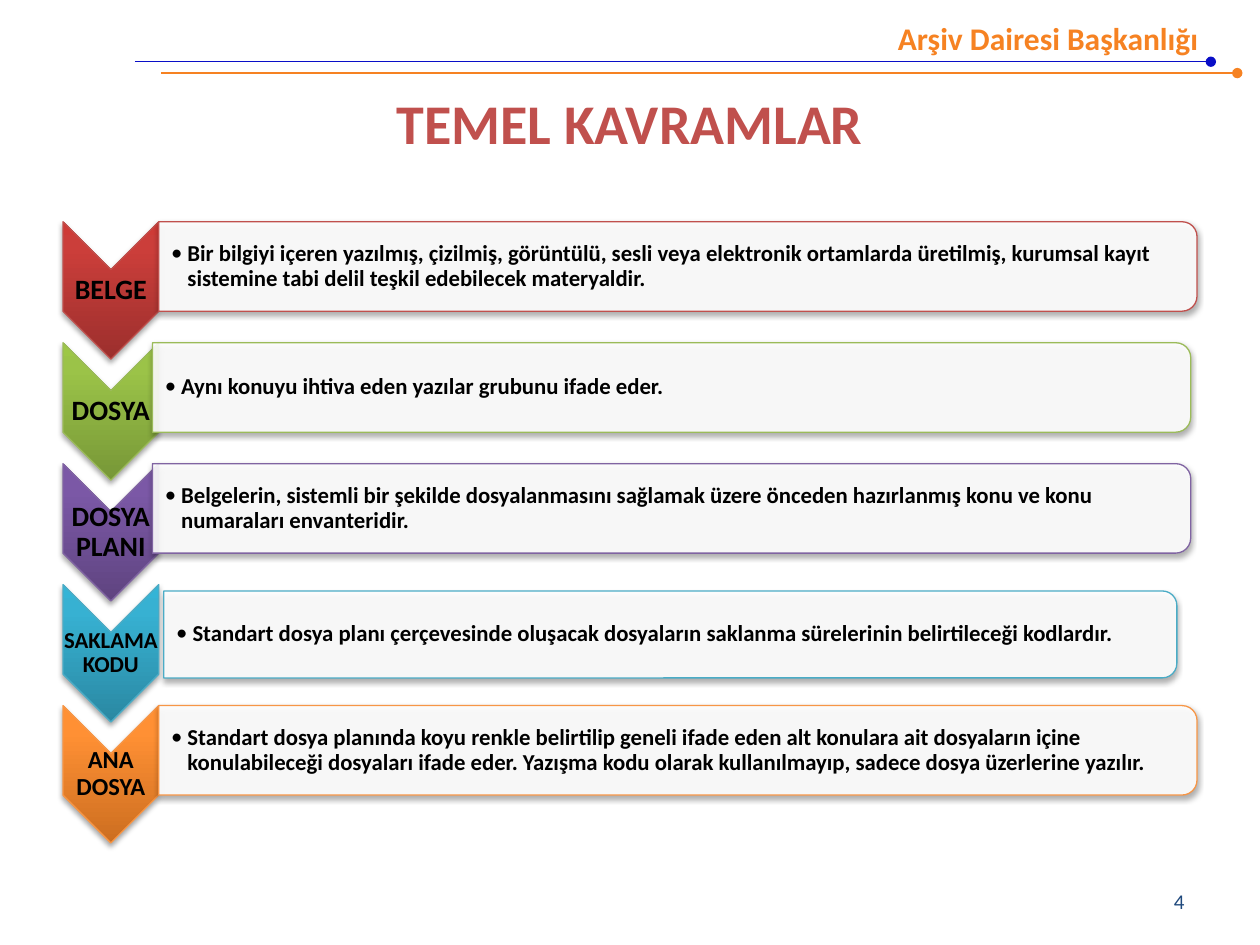
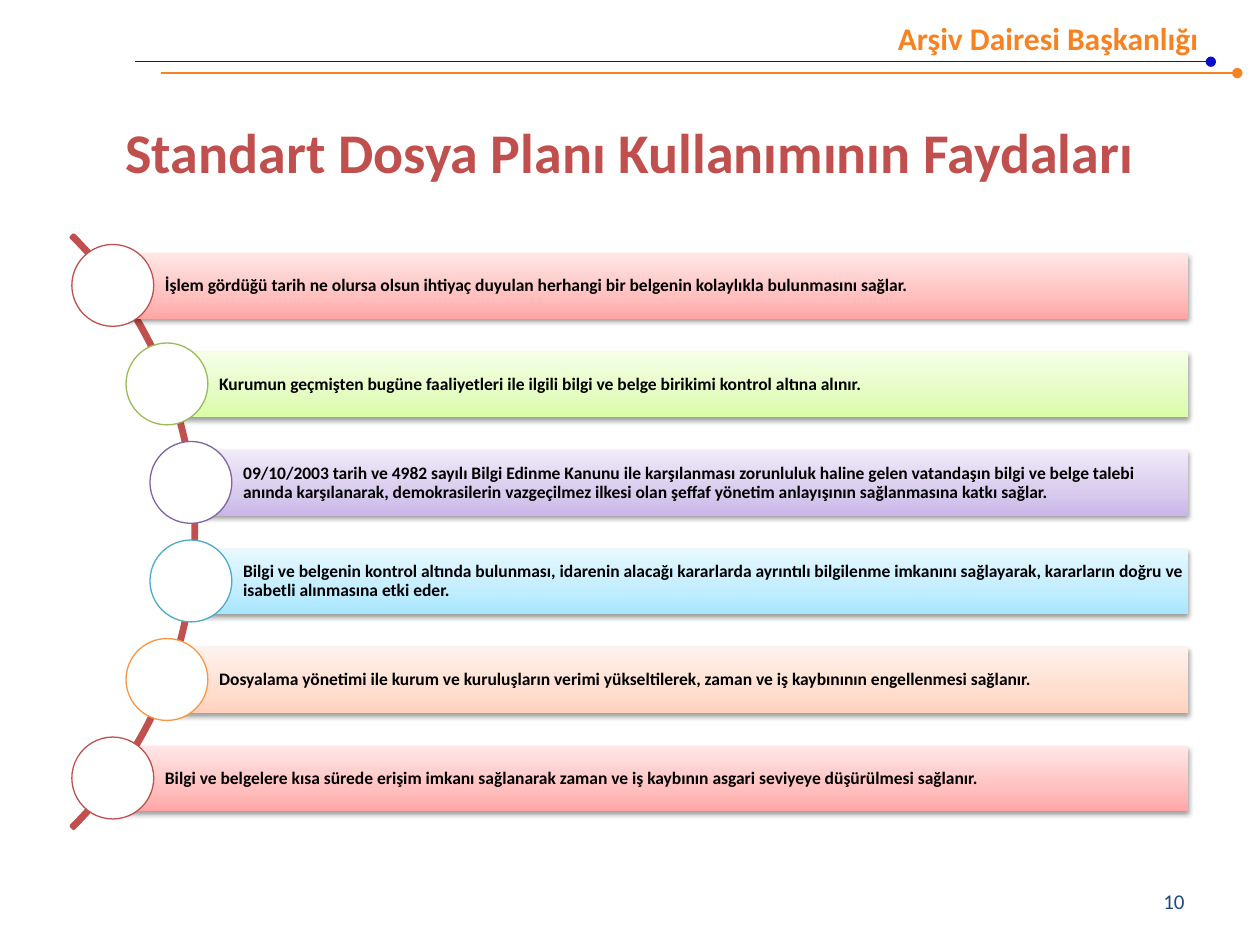
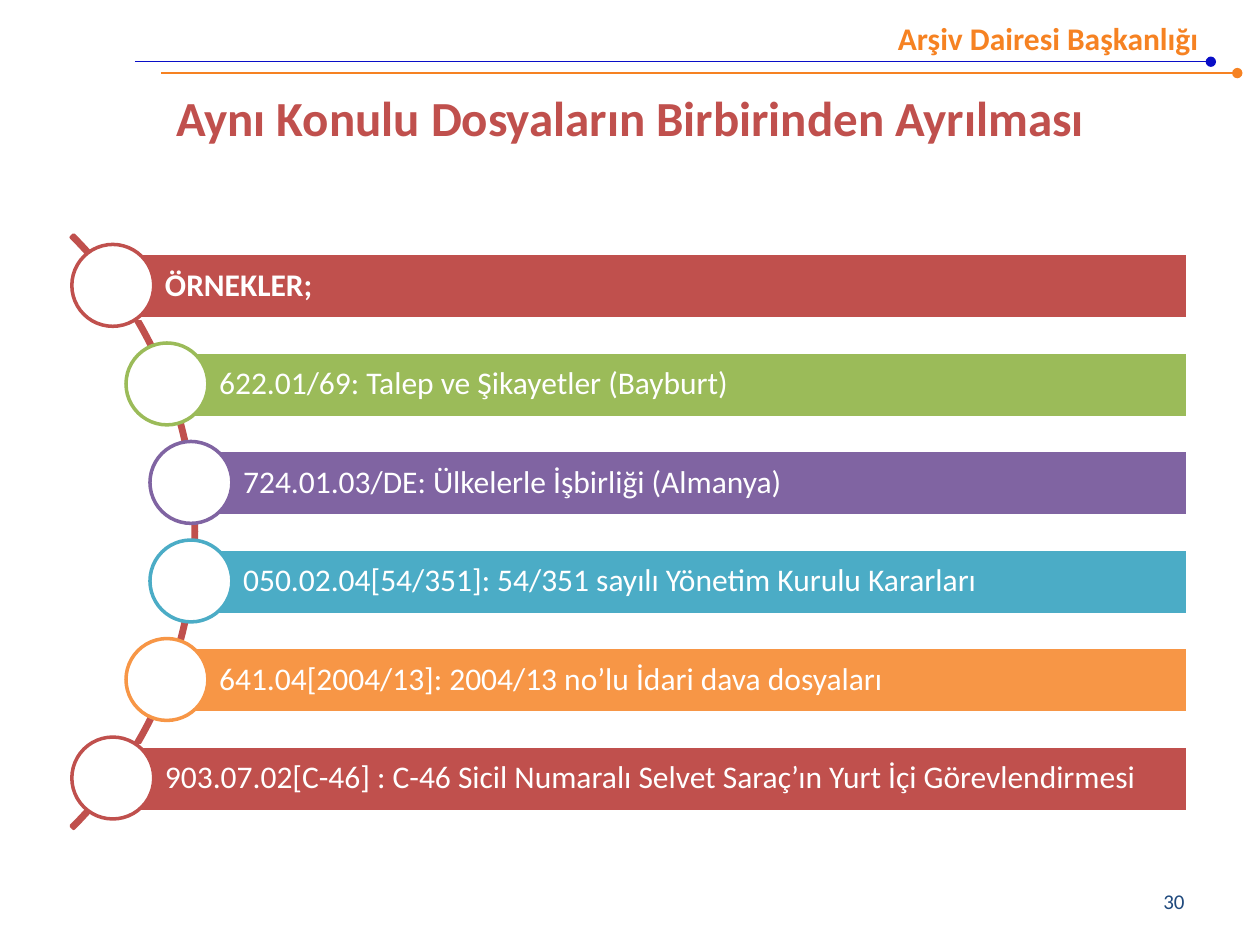
from dataclasses import dataclass
from typing import Optional

from lxml import etree
from pptx import Presentation
from pptx.dml.color import RGBColor
from pptx.enum.shapes import MSO_CONNECTOR as Link, MSO_SHAPE as Form
from pptx.enum.text import MSO_ANCHOR as Anchor, PP_ALIGN as Align
from pptx.oxml import parse_xml
from pptx.oxml.ns import nsdecls, qn
from pptx.util import Inches, Pt

Stops = tuple[tuple[int, str], ...]


@dataclass(frozen=True)
class Accent:
    base: str
    deep: Stops
    pale: Stops


def accent(base: str, deep: str, pale: str) -> Accent:
    return Accent(
        base,
        tuple(zip((0, 80, 100), deep.split())),
        tuple(zip((0, 35, 100), pale.split())),
    )


@dataclass(frozen=True)
class Theme:
    font: str = "Calibri"
    white: str = "FFFFFF"
    black: str = "000000"
    title: str = "C0504D"
    brand: str = "F68222"
    blue: str = "090EC7"
    page: str = "1F497D"
    head_size: float = 18
    page_size: float = 12
    body_size: float = 13
    thin: float = 0.75
    thick: float = 2
    accents: tuple[Accent, ...] = (
        accent("C0504D", "9C2F2D CB3E3A CE3B37", "FFA6A5 FFC0BF FFE7E7"),
        accent("9BBB59", "779737 9BC348 9DC746", "DAFDA7 E4FCC2 F5FFE7"),
        accent("8064A2", "5F4480 7B58A6 7C57A8", "C9B5E8 D8CBEE F0EAF9"),
        accent("4BACC6", "2A88A2 37B1D2 34B4D6", "A7E6FF C1EDFF E7F8FF"),
        accent("F79646", "CC6E20 FF9034 FF9136", "FFD2BD FFDED0 FFF2ED"),
    )


THEME = Theme()


@dataclass(frozen=True)
class Box:
    left: float
    top: float
    width: float
    height: float

    def inches(self) -> tuple:
        return tuple(Inches(n) for n in (self.left, self.top, self.width, self.height))

    def turned(self) -> "Box":
        gap = (self.width - self.height) / 2
        return Box(self.left + gap, self.top - gap, self.height, self.width)


@dataclass(frozen=True)
class Style:
    size: float
    color: str = THEME.black
    bold: bool = True
    align: Align = Align.LEFT
    pads: tuple[float, float, float, float] = (0.1, 0.05, 0.1, 0.05)
    tight: bool = True
    bullet: bool = False


@dataclass(frozen=True)
class Rule:
    left: float
    top: float
    color: str


@dataclass(frozen=True)
class Term:
    label: str
    size: float
    text: str
    left: float = 1.26
    drop: float = 0
    width: float = 8.24
    height: float = 0.71


@dataclass(frozen=True)
class Look:
    pale: bool
    size: float
    color: str
    line: float
    pad: float


RULES = (Rule(1.28, 0.58, THEME.brand), Rule(1.07, 0.49, THEME.blue))
RULE_LEN = 8.54

TERMS = (
    Term("BELGE", 16, "Bir bilgiyi içeren yazılmış, çizilmiş, görüntülü, sesli veya elektronik ortamlarda üretilmiş, kurumsal kayıt sistemine tabi delil teşkil edebilecek materyaldir."),
    Term("DOSYA", 16, "Aynı konuyu ihtiva eden yazılar grubunu ifade eder.", left=1.21),
    Term("DOSYA PLANI", 16, "Belgelerin, sistemli bir şekilde dosyalanmasını sağlamak üzere önceden hazırlanmış konu ve konu numaraları envanteridir.", left=1.21),
    Term("SAKLAMA KODU", 13, "Standart dosya planı çerçevesinde oluşacak dosyaların saklanma sürelerinin belirtileceği kodlardır.", left=1.3, drop=0.05, width=8.04, height=0.69),
    Term("ANA DOSYA", 14, "Standart dosya planında koyu renkle belirtilip geneli ifade eden alt konulara ait dosyaların içine konulabileceği dosyaları ifade eder. Yazışma kodu olarak kullanılmayıp, sadece dosya üzerlerine yazılır."),
)
TERM_TOP, TERM_STEP = 1.76, 0.96

GAINS = (
    "İşlem gördüğü tarih ne olursa olsun ihtiyaç duyulan herhangi bir belgenin kolaylıkla bulunmasını sağlar.",
    "Kurumun geçmişten bugüne faaliyetleri ile ilgili bilgi ve belge birikimi kontrol altına alınır.",
    "09/10/2003 tarih ve 4982 sayılı Bilgi Edinme Kanunu ile karşılanması zorunluluk haline gelen vatandaşın bilgi ve belge talebi anında karşılanarak, demokrasilerin vazgeçilmez ilkesi olan şeffaf yönetim anlayışının sağlanmasına katkı sağlar.",
    "Bilgi ve belgenin kontrol altında bulunması, idarenin alacağı kararlarda ayrıntılı bilgilenme imkanını sağlayarak, kararların doğru ve isabetli alınmasına etki eder.",
    "Dosyalama yönetimi ile kurum ve kuruluşların verimi yükseltilerek, zaman ve iş kaybınının engellenmesi sağlanır.",
    "Bilgi ve belgelere kısa sürede erişim imkanı sağlanarak zaman ve iş kaybının asgari seviyeye düşürülmesi sağlanır.",
)
CASES = (
    "ÖRNEKLER;",
    "622.01/69: Talep ve Şikayetler (Bayburt)",
    "724.01.03/DE: Ülkelerle İşbirliği (Almanya)",
    "050.02.04[54/351]: 54/351 sayılı Yönetim Kurulu Kararları",
    "641.04[2004/13]: 2004/13 no’lu İdari dava dosyaları",
    "903.07.02[C-46] : C-46 Sicil Numaralı Selvet Saraç’ın Yurt İçi Görevlendirmesi",
)
BAR_LEFTS = (0.9, 1.33, 1.52, 1.52, 1.33, 0.9)
BAR_TOP, BAR_LAST, BAR_RIGHT = 2.01, 5.92, 9.43
BAR_STEP = (BAR_LAST - BAR_TOP) / (len(BAR_LEFTS) - 1)
GAIN_LOOK = Look(True, 10, THEME.black, THEME.thin, 0.03)
CASE_LOOK = Look(False, 18, THEME.white, THEME.thick, 0.05)


def rgb(code: str) -> RGBColor:
    return RGBColor.from_string(code)


def write(shape, text: str, style: Style, anchor: Anchor = Anchor.MIDDLE) -> None:
    frame = shape.text_frame
    frame.word_wrap = True
    frame.vertical_anchor = anchor
    (frame.margin_left, frame.margin_top,
     frame.margin_right, frame.margin_bottom) = map(Inches, style.pads)
    para = frame.paragraphs[0]
    para.alignment = style.align
    if style.tight:
        para.line_spacing = 0.9
    if style.bullet:
        props = para._p.get_or_add_pPr()
        props.set("marL", str(Inches(0.13)))
        props.set("indent", str(-Inches(0.13)))
        etree.SubElement(props, qn("a:buFont")).set("typeface", THEME.font)
        etree.SubElement(props, qn("a:buChar")).set("char", "•")
    run = para.add_run()
    run.text = text
    run.font.name = THEME.font
    run.font.size = Pt(style.size)
    run.font.bold = style.bold
    run.font.color.rgb = rgb(style.color)


def add_text(slide, box: Box, text: str, style: Style, anchor: Anchor = Anchor.MIDDLE) -> None:
    write(slide.shapes.add_textbox(*box.inches()), text, style, anchor)


def add_form(slide, form: Form, box: Box, fill: Optional[str] = None,
             line: Optional[str] = None, weight: float = THEME.thin, turn: int = 0):
    spot = box.turned() if turn else box
    shape = slide.shapes.add_shape(form, *spot.inches())
    shape.rotation = turn
    shape.shadow.inherit = False
    if fill:
        shape.fill.solid()
        shape.fill.fore_color.rgb = rgb(fill)
    else:
        shape.fill.background()
    if line:
        shape.line.color.rgb = rgb(line)
        shape.line.width = Pt(weight)
    else:
        shape.line.fill.background()
    return shape


def shade(shape, stops: Stops) -> None:
    marks = "".join(
        f'<a:gs pos="{pos * 1000}"><a:srgbClr val="{code}"/></a:gs>' for pos, code in stops
    )
    grad = parse_xml(
        f'<a:gradFill {nsdecls("a")} rotWithShape="0"><a:gsLst>{marks}</a:gsLst>'
        '<a:lin ang="16200000" scaled="0"/></a:gradFill>'
    )
    props = shape.element.spPr
    props.replace(props.find(qn("a:noFill")), grad)


def add_shadow(shape, alpha: int, dist: float) -> None:
    effects = shape.element.spPr.find(qn("a:effectLst"))
    effects.append(parse_xml(
        f'<a:outerShdw {nsdecls("a")} blurRad="{Pt(3.1)}" dist="{Pt(dist)}" dir="5400000" '
        f'rotWithShape="0"><a:srgbClr val="{THEME.black}"><a:alpha val="{alpha * 1000}"/>'
        '</a:srgbClr></a:outerShdw>'
    ))


def add_rule(slide, rule: Rule) -> None:
    line = slide.shapes.add_connector(
        Link.STRAIGHT, Inches(rule.left), Inches(rule.top),
        Inches(rule.left + RULE_LEN), Inches(rule.top),
    )
    line.line.color.rgb = rgb(rule.color)
    line.line.width = Pt(THEME.thin)
    props = line.element.spPr
    etree.SubElement(props.find(qn("a:ln")), qn("a:tailEnd")).set("type", "oval")
    etree.SubElement(props, qn("a:effectLst"))


def add_page(deck, title: str, size: float, number: int, shift: float = 0):
    slide = deck.slides.add_slide(deck.slide_layouts[6])
    for rule in RULES:
        add_rule(slide, rule)
    add_text(slide, Box(6.41, 0.1, 3.2, 0.4), "Arşiv Dairesi Başkanlığı",
             Style(THEME.head_size, THEME.brand, align=Align.RIGHT, tight=False), Anchor.TOP)
    add_text(slide, Box(0.5, 0.3, 9, 1.25), title,
             Style(size, THEME.title, align=Align.CENTER, tight=False,
                   pads=(0.1, 0.05 + 2 * shift, 0.1, 0.05)))
    add_text(slide, Box(7.17, 6.95, 2.33, 0.4), str(number),
             Style(THEME.page_size, THEME.page, False, Align.RIGHT, tight=False))
    return slide


def add_term(slide, term: Term, top: float, tone: Accent) -> None:
    arrow = add_form(slide, Form.CHEVRON, Box(0.5, top, 0.76, 1.09), line=tone.base, turn=90)
    shade(arrow, tone.deep)
    add_shadow(arrow, 35, 1.8)
    add_text(slide, Box(0.48, top + 0.38, 0.8, 0.33), term.label,
             Style(term.size, align=Align.CENTER, pads=(0.01,) * 4))
    head = top + term.drop
    card = add_form(slide, Form.ROUND_2_SAME_RECTANGLE,
                    Box(term.left, head, term.width, term.height),
                    THEME.white, tone.base, turn=90)
    tint = card.element.spPr.find(qn("a:solidFill"))[0]
    etree.SubElement(tint, qn("a:alpha")).set("val", "90000")
    add_shadow(card, 35, 1.8)
    add_text(slide, Box(term.left, head + 0.03, term.width - 0.04, term.height - 0.06), term.text,
             Style(THEME.body_size, pads=(0.1, 0.01, 0.01, 0.01), bullet=True))


def add_curve(slide, rows: tuple[str, ...], look: Look) -> None:
    arc = add_form(slide, Form.BLOCK_ARC, Box(-5.1, 0.89, 6.66, 6.66),
                   line=THEME.title, weight=THEME.thick)
    for spot, value in enumerate((189, 27, 0.004)):
        arc.adjustments[spot] = value
    for row, (left, text) in enumerate(zip(BAR_LEFTS, rows)):
        tone = THEME.accents[row % len(THEME.accents)]
        top = BAR_TOP + row * BAR_STEP
        box = Box(left, top, BAR_RIGHT - left, 0.52)
        if look.pale:
            bar = add_form(slide, Form.RECTANGLE, box)
            shade(bar, tone.pale)
            add_shadow(bar, 38, 1.6)
        else:
            bar = add_form(slide, Form.RECTANGLE, box, tone.base, THEME.white, look.line)
        write(bar, text, Style(look.size, look.color, look.pale or row == 0,
                               pads=(0.41, look.pad, look.pad, look.pad)))
        add_form(slide, Form.OVAL, Box(left - 0.33, top - 0.07, 0.65, 0.65),
                 THEME.white, tone.base, look.line)


def main() -> None:
    deck = Presentation()
    deck.slide_width, deck.slide_height = Inches(10), Inches(7.5)

    terms = add_page(deck, "TEMEL KAVRAMLAR", 32, 4, 0.04)
    for row, (term, tone) in enumerate(zip(TERMS, THEME.accents)):
        add_term(terms, term, TERM_TOP + row * TERM_STEP, tone)

    gains = add_page(deck, "Standart Dosya Planı Kullanımının Faydaları", 32, 10, 0.27)
    add_curve(gains, GAINS, GAIN_LOOK)

    cases = add_page(deck, "Aynı Konulu Dosyaların Birbirinden Ayrılması", 28, 30)
    add_curve(cases, CASES, CASE_LOOK)

    deck.save("out.pptx")


if __name__ == "__main__":
    main()
